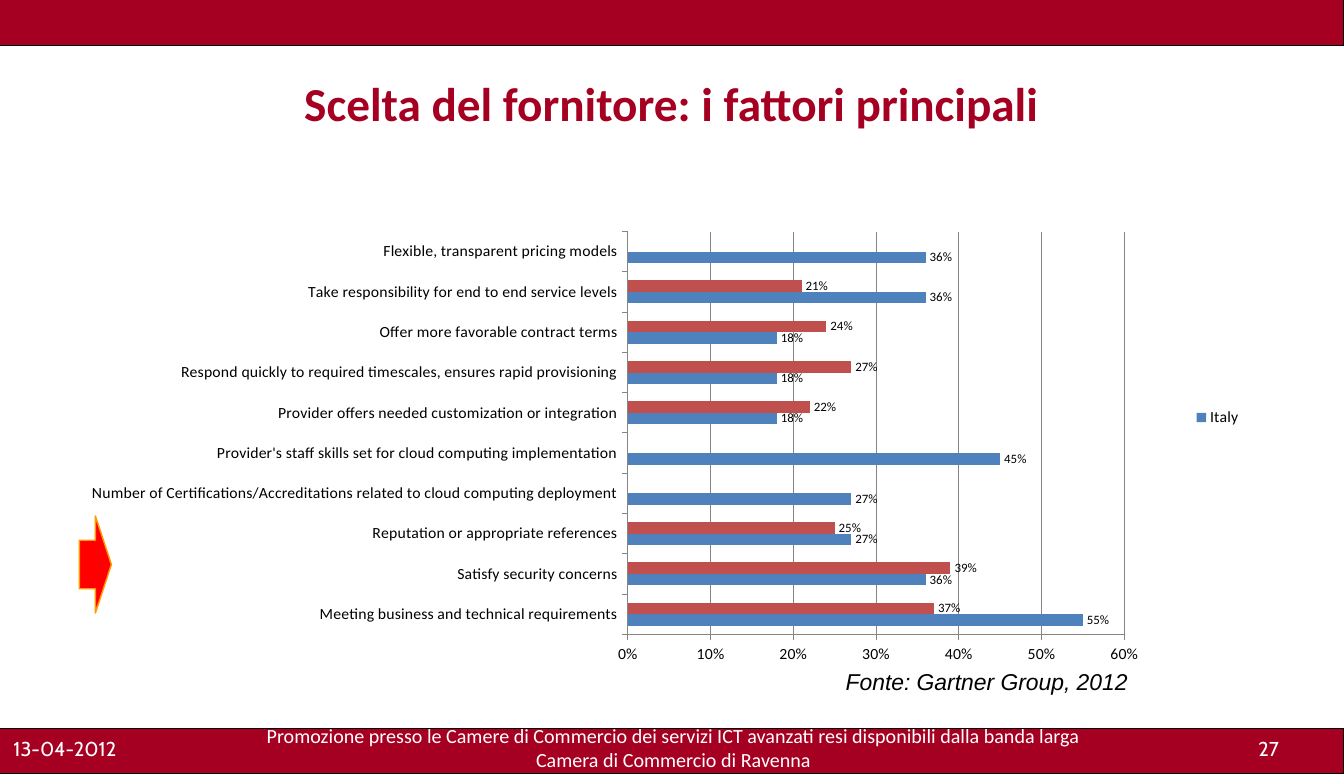
from dataclasses import dataclass

from lxml import etree
from pptx import Presentation
from pptx.chart.data import CategoryChartData
from pptx.dml.color import RGBColor
from pptx.enum.chart import (XL_CHART_TYPE, XL_LABEL_POSITION,
                             XL_LEGEND_POSITION, XL_TICK_MARK)
from pptx.enum.shapes import MSO_SHAPE
from pptx.enum.text import MSO_ANCHOR, PP_ALIGN
from pptx.oxml import parse_xml
from pptx.oxml.ns import nsdecls, qn
from pptx.slide import Slide
from pptx.util import Inches, Pt

BAR_CHART = XL_CHART_TYPE.BAR_CLUSTERED
OUTSIDE_END = XL_LABEL_POSITION.OUTSIDE_END
LEGEND_RIGHT = XL_LEGEND_POSITION.RIGHT
TICK_OUTSIDE = XL_TICK_MARK.OUTSIDE
RECTANGLE, RIGHT_ARROW = MSO_SHAPE.RECTANGLE, MSO_SHAPE.RIGHT_ARROW
TOP, MIDDLE = MSO_ANCHOR.TOP, MSO_ANCHOR.MIDDLE
LEFT, CENTER = PP_ALIGN.LEFT, PP_ALIGN.CENTER

BLACK = RGBColor(0x00, 0x00, 0x00)
WHITE = RGBColor(0xFF, 0xFF, 0xFF)
CRIMSON = RGBColor(0xA5, 0x00, 0x21)
RED = RGBColor(0xFF, 0x00, 0x00)
ORANGE = RGBColor(0xFF, 0x99, 0x00)
BLUE = RGBColor(0x4F, 0x81, 0xBD)
BRICK = RGBColor(0xC0, 0x50, 0x4D)
GREY = RGBColor(0x86, 0x86, 0x86)

SLIDE_WIDTH, SLIDE_HEIGHT, BAND_HEIGHT = 13.03, 7.5, 0.44


@dataclass(frozen=True)
class Block:
    kind: MSO_SHAPE
    left: float
    top: float
    width: float
    height: float
    fill: RGBColor
    line: RGBColor
    line_width: float


@dataclass(frozen=True)
class Label:
    lines: tuple[str, ...]
    left: float
    top: float
    width: float
    height: float
    size: float
    font: str
    color: RGBColor
    align: PP_ALIGN = LEFT
    anchor: MSO_ANCHOR = TOP
    margin_x: float = 0
    margin_y: float = 0
    bold: bool = False
    italic: bool = False


@dataclass(frozen=True)
class Factor:
    name: str
    italy: float
    worldwide: float | None


@dataclass(frozen=True)
class Bars:
    name: str
    field: str
    color: RGBColor


BANDS = [
    Block(RECTANGLE, 0, top, SLIDE_WIDTH, BAND_HEIGHT, CRIMSON, BLACK, 0.75)
    for top in (0, SLIDE_HEIGHT - BAND_HEIGHT)
]
ARROW = Block(RIGHT_ARROW, 0.77, 5, 0.31, 0.94, RED, ORANGE, 1)

LABELS = [
    Label(("Promozione presso le Camere di Commercio dei servizi ICT avanzati "
           "resi disponibili dalla banda larga",
           "Camera di Commercio di Ravenna"),
          2.03, 7.01, 9, 0.48, 14, "Calibri", WHITE, CENTER),
    Label(("13-04-2012",), 0.13, 7.14, 1.19, 0.24, 14, "Cabin", WHITE),
    Label(("27",), 12.2, 7.14, 0.6, 0.24, 14, "Cabin", WHITE),
    Label(("Scelta del fornitore: i fattori principali",),
          0.65, 0.44, 11.72, 1.11, 33, "Calibri", CRIMSON, CENTER, MIDDLE,
          0.12, 0.06, bold=True),
    Label(("Fonte: Gartner Group, 2012",), 8.1, 6.42, 3.08, 0.37, 16, "Arial",
          BLACK, margin_x=0.1, margin_y=0.05, italic=True),
]

FACTORS = [
    Factor("Meeting business and technical requirements", 0.55, 0.37),
    Factor("Satisfy security concerns", 0.36, 0.39),
    Factor("Reputation or appropriate references", 0.27, 0.25),
    Factor("Number of Certifications/Accreditations related to cloud "
           "computing deployment", 0.27, None),
    Factor("Provider's staff skills set for cloud computing implementation",
           0.45, None),
    Factor("Provider offers needed customization or integration", 0.18, 0.22),
    Factor("Respond quickly to required timescales, ensures rapid "
           "provisioning", 0.18, 0.27),
    Factor("Offer more favorable contract terms", 0.18, 0.24),
    Factor("Take responsibility for end to end service levels", 0.36, 0.21),
    Factor("Flexible, transparent pricing models", 0.36, None),
]
SERIES = [Bars("Italy", "italy", BLUE), Bars("WW", "worldwide", BRICK)]
PLOT_AREA = {"x": 0.463, "y": 0.111, "w": 0.427, "h": 0.843}


def add_block(page: Slide, block: Block) -> None:
    shape = page.shapes.add_shape(
        block.kind, Inches(block.left), Inches(block.top),
        Inches(block.width), Inches(block.height))
    shape.shadow.inherit = False
    shape.fill.solid()
    shape.fill.fore_color.rgb = block.fill
    shape.line.color.rgb = block.line
    shape.line.width = Pt(block.line_width)


def add_label(page: Slide, label: Label) -> None:
    box = page.shapes.add_textbox(
        Inches(label.left), Inches(label.top),
        Inches(label.width), Inches(label.height))
    frame = box.text_frame
    frame.word_wrap = True
    frame.vertical_anchor = label.anchor
    frame.margin_left = frame.margin_right = Inches(label.margin_x)
    frame.margin_top = frame.margin_bottom = Inches(label.margin_y)
    frame.text = "\n".join(label.lines)
    for para in frame.paragraphs:
        para.alignment = label.align
        para.font.size = Pt(label.size)
        para.font.name = label.font
        para.font.color.rgb = label.color
        para.font.bold = label.bold
        para.font.italic = label.italic


def add_factor_chart(page: Slide) -> None:
    data = CategoryChartData(number_format="0%")
    data.categories = [factor.name for factor in FACTORS]
    for bars in SERIES:
        data.add_series(bars.name,
                        [getattr(factor, bars.field) for factor in FACTORS])
    chart = page.shapes.add_chart(
        BAR_CHART, Inches(0.87), Inches(1.73), Inches(11.27), Inches(4.7),
        data).chart
    chart.has_title = False
    chart.font.name = "Calibri"
    chart.font.size = Pt(11)
    chart.font.color.rgb = BLACK

    # Bars and their values
    plot = chart.plots[0]
    plot.vary_by_categories = False
    plot.gap_width = 150
    plot.overlap = 0
    for bars, series in zip(SERIES, plot.series):
        series.format.fill.solid()
        series.format.fill.fore_color.rgb = bars.color
        values = series.data_labels
        values.show_value = True
        values.number_format = "0%"
        values.number_format_is_linked = False
        values.position = OUTSIDE_END
        values.font.size = Pt(9)

    # Axes
    scale = chart.value_axis
    scale.minimum_scale, scale.maximum_scale = 0, 0.6
    scale.major_unit = 0.1
    scale.tick_labels.number_format = "0%"
    scale.tick_labels.number_format_is_linked = False
    scale.has_major_gridlines = True
    scale.major_gridlines.format.line.color.rgb = GREY
    for axis in (scale, chart.category_axis):
        axis.major_tick_mark = TICK_OUTSIDE
        axis.format.line.color.rgb = GREY

    # Legend with the second series only
    chart.has_legend = True
    chart.legend.position = LEGEND_RIGHT
    chart.legend.include_in_layout = False
    chart.legend._element.insert(1, parse_xml(
        f'<c:legendEntry {nsdecls("c")}><c:idx val="0"/>'
        '<c:delete val="1"/></c:legendEntry>'))

    # Fixed inner plot area
    plot_area = chart._chartSpace.find(".//" + qn("c:plotArea"))
    for old_layout in plot_area.findall(qn("c:layout")):
        plot_area.remove(old_layout)
    layout = parse_xml(f'<c:layout {nsdecls("c")}><c:manualLayout/></c:layout>')
    settings = {"layoutTarget": "inner", "xMode": "edge", "yMode": "edge",
                **PLOT_AREA}
    for tag, value in settings.items():
        etree.SubElement(layout[0], qn(f"c:{tag}")).set("val", str(value))
    plot_area.insert(0, layout)


def main() -> None:
    deck = Presentation()
    deck.slide_width = Inches(SLIDE_WIDTH)
    deck.slide_height = Inches(SLIDE_HEIGHT)
    page = deck.slides.add_slide(deck.slide_layouts[6])
    for band in BANDS:
        add_block(page, band)
    add_factor_chart(page)
    add_block(page, ARROW)
    for label in LABELS:
        add_label(page, label)
    deck.save("out.pptx")


if __name__ == "__main__":
    main()
